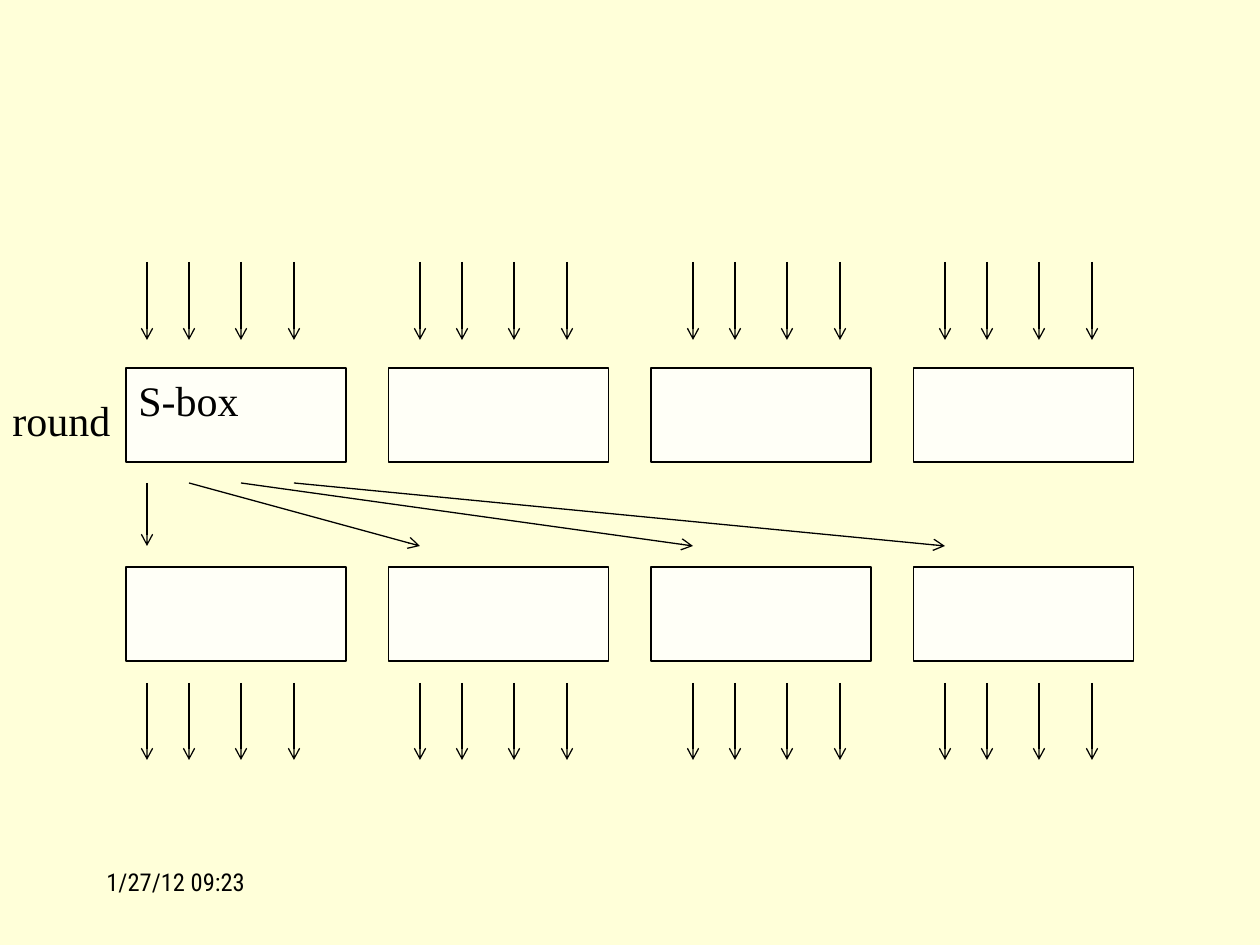
from lxml.etree import SubElement
from pptx import Presentation
from pptx.dml.color import RGBColor
from pptx.enum.shapes import MSO_CONNECTOR, MSO_SHAPE
from pptx.enum.text import MSO_ANCHOR, PP_ALIGN
from pptx.oxml.ns import qn
from pptx.util import Pt

PX = 914400 / 126

# Content: text, position and format
LABELS = [
    ("1/27/12 09:23", (94, 861, 262, 63), {"size": 14, "font": "Roboto Condensed"}),
    ("round", (0, 388, 136, 63), {}),
]
BOX_ROWS = [(368, ["S-box", "", "", ""]), (567, ["", "", "", ""])]
BOX_LEFT, BOX_PITCH, BOX_WIDTH, BOX_HEIGHT = 126, 262.5, 220, 94

# Arrows: four bits for each box, then the permutation between the rows
GROUP_STARTS = [147, 420, 693, 945]
BIT_OFFSETS = [0, 42, 94, 147]
BIT_ROWS = [(262, 340), (683, 760)]
PERMUTATION_TOP, PERMUTATION_BOTTOM = 483, 546


def emu(*lengths):
    return [round(length * PX) for length in lengths]


def color(hex_string):
    return RGBColor.from_string(hex_string)


def set_text(shape, text, size=24, font="Times New Roman", fill="000000"):
    frame = shape.text_frame
    frame.word_wrap = True
    frame.vertical_anchor = MSO_ANCHOR.TOP
    paragraph = frame.paragraphs[0]
    paragraph.alignment = PP_ALIGN.LEFT
    run = paragraph.add_run()
    run.text = text
    run.font.size = Pt(size)
    run.font.name = font
    run.font.color.rgb = color(fill)


def add_box(slide, left, top, text):
    box = slide.shapes.add_shape(
        MSO_SHAPE.RECTANGLE, *emu(left, top, BOX_WIDTH, BOX_HEIGHT))
    box.shadow.inherit = False
    box.fill.solid()
    box.fill.fore_color.rgb = color("FFFFF7")
    box.line.color.rgb = color("000000")
    box.line.width = Pt(0.75)
    if text:
        set_text(box, text)


def add_arrow(slide, x1, y1, x2, y2):
    arrow = slide.shapes.add_connector(MSO_CONNECTOR.STRAIGHT, *emu(x1, y1, x2, y2))
    arrow.line.color.rgb = color("000000")
    arrow.line.width = Pt(0.75)
    SubElement(arrow.line._get_or_add_ln(), qn("a:tailEnd"), type="arrow")
    SubElement(arrow._element.spPr, qn("a:effectLst"))


def main():
    presentation = Presentation()
    presentation.slide_width, presentation.slide_height = emu(1260, 945)
    slide = presentation.slides.add_slide(presentation.slide_layouts[6])
    slide.background.fill.solid()
    slide.background.fill.fore_color.rgb = color("FFFFD9")

    # Substitution boxes
    for top, texts in BOX_ROWS:
        for column, text in enumerate(texts):
            add_box(slide, BOX_LEFT + column * BOX_PITCH, top, text)

    # Bits entering and leaving
    for top, bottom in BIT_ROWS:
        for start in GROUP_STARTS:
            for offset in BIT_OFFSETS:
                add_arrow(slide, start + offset, top, start + offset, bottom)

    # Each bit of the first box goes to a different box
    for offset, target in zip(BIT_OFFSETS, GROUP_STARTS):
        add_arrow(slide, GROUP_STARTS[0] + offset, PERMUTATION_TOP,
                  target, PERMUTATION_BOTTOM)

    # Labels
    for text, place, text_format in LABELS:
        set_text(slide.shapes.add_textbox(*emu(*place)), text, **text_format)

    presentation.save("out.pptx")


if __name__ == "__main__":
    main()
